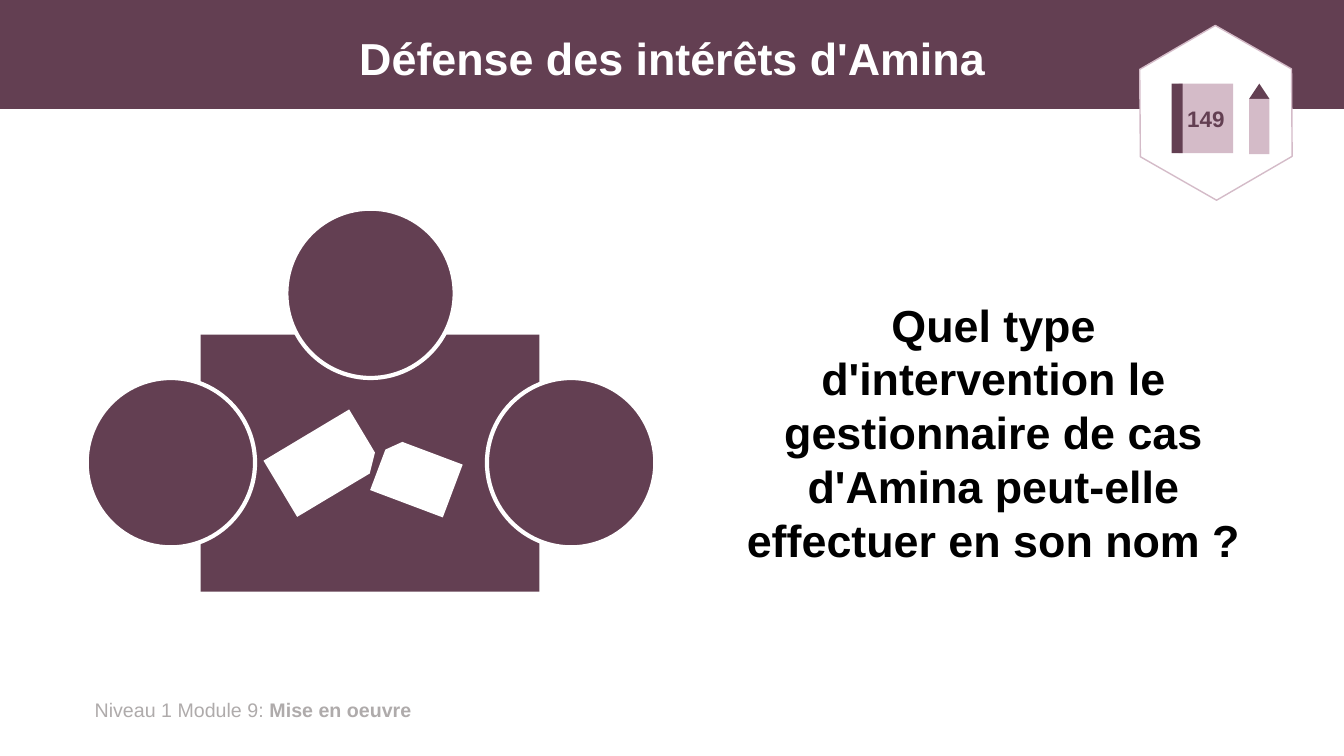
from pptx import Presentation
from pptx.dml.color import RGBColor
from pptx.enum import shapes, text
from pptx.util import Inches, Pt

COLOURS = {
    "plum": "633F52",
    "pink": "D4BBC8",
    "white": "FFFFFF",
    "black": "000000",
    "grey": "AFABAB",
}
KIND = shapes.MSO_SHAPE


def colour(name):
    return RGBColor.from_string(COLOURS[name])


def add_figure(page, kind, place, fill, line=None, width=1, rotation=0):
    """Add a flat preset shape; place is left, top, width, height in inches."""
    figure = page.shapes.add_shape(kind, *map(Inches, place))
    figure.shadow.inherit = False
    figure.rotation = rotation
    figure.fill.solid()
    figure.fill.fore_color.rgb = colour(fill)
    if line:
        figure.line.color.rgb = colour(line)
        figure.line.width = Pt(width)
    else:
        figure.line.fill.background()
    return figure


def write(shape, spans, size, ink, align=text.PP_ALIGN.CENTER, wrap=True):
    """Fill a shape with one paragraph of (wording, bold) spans."""
    frame = shape.text_frame
    frame.word_wrap = wrap
    para = frame.paragraphs[0]
    para.alignment = align
    para.font.name = "Arial"
    para.font.size = Pt(size)
    para.font.color.rgb = colour(ink)
    for wording, bold in spans:
        span = para.add_run()
        span.text = wording
        span.font.bold = bold
    return para


def add_text(page, place, spans, size, ink, align):
    box = page.shapes.add_textbox(*map(Inches, place))
    write(box, spans, size, ink, align)


def add_header(page):
    title = page.shapes.title
    title.left, title.top = Inches(0.92), Inches(0.13)
    title.width, title.height = Inches(11.5), Inches(0.95)
    title.text_frame.vertical_anchor = text.MSO_ANCHOR.MIDDLE
    para = write(title, [("Défense des intérêts d'Amina", True)], 32, "white")
    para.line_spacing = 0.9
    # The band lies behind the title
    band = add_figure(page, KIND.RECTANGLE, (0, 0, 13.33, 1.08), "plum")
    title.element.addprevious(band.element)


def add_meeting(page):
    """Three people around a table with two sheets of paper."""
    add_figure(page, KIND.RECTANGLE, (1.99, 3.32, 3.36, 2.55), "plum")
    for left, top in ((0.86, 3.75), (2.84, 2.07), (4.83, 3.75)):
        add_figure(page, KIND.OVAL, (left, top, 1.67, 1.68), "plum", "white", 3)
    for place, rotation in (((2.88, 4.1, 0.65, 0.99), 59.1),
                            ((3.85, 4.35, 0.56, 0.77), 290.6)):
        sheet = add_figure(page, KIND.SNIP_1_RECTANGLE, place, "white",
                           rotation=rotation)
        sheet.adjustments[0] = 0.233


def add_page_badge(page, number):
    """Hexagon holding a workbook with its page number, and a pencil."""
    hexagon = add_figure(page, KIND.HEXAGON, (11.19, 0.37, 1.74, 1.5),
                         "white", "pink", rotation=29.7)
    hexagon.adjustments[0] = 0.29
    cover = add_figure(page, KIND.RECTANGLE, (11.69, 0.83, 0.54, 0.69), "pink")
    cover.text_frame.vertical_anchor = text.MSO_ANCHOR.MIDDLE
    write(cover, [(number, True)], 16, "plum", wrap=False)
    add_figure(page, KIND.RECTANGLE, (11.62, 0.83, 0.11, 0.69), "plum")
    add_figure(page, KIND.ISOSCELES_TRIANGLE, (12.39, 0.83, 0.2, 0.15), "plum")
    add_figure(page, KIND.RECTANGLE, (12.39, 0.98, 0.2, 0.55), "pink")


def main():
    deck = Presentation()
    deck.slide_width, deck.slide_height = Inches(13.33), Inches(7.5)
    page = deck.slides.add_slide(deck.slide_layouts[5])

    add_header(page)
    # Footer
    add_text(page, (0.84, 6.87, 4.55, 0.34),
             [("Niveau 1 Module 9: ", False), ("Mise en oeuvre", True)],
             14, "grey", text.PP_ALIGN.LEFT)
    add_meeting(page)
    # Question
    add_text(page, (7.3, 2.9, 5.11, 2.79),
             [("Quel type d'intervention le gestionnaire de cas d'Amina "
               "peut-elle effectuer en son nom ?", True)],
             32, "black", text.PP_ALIGN.CENTER)
    add_page_badge(page, "149")

    deck.save("out.pptx")


if __name__ == "__main__":
    main()
